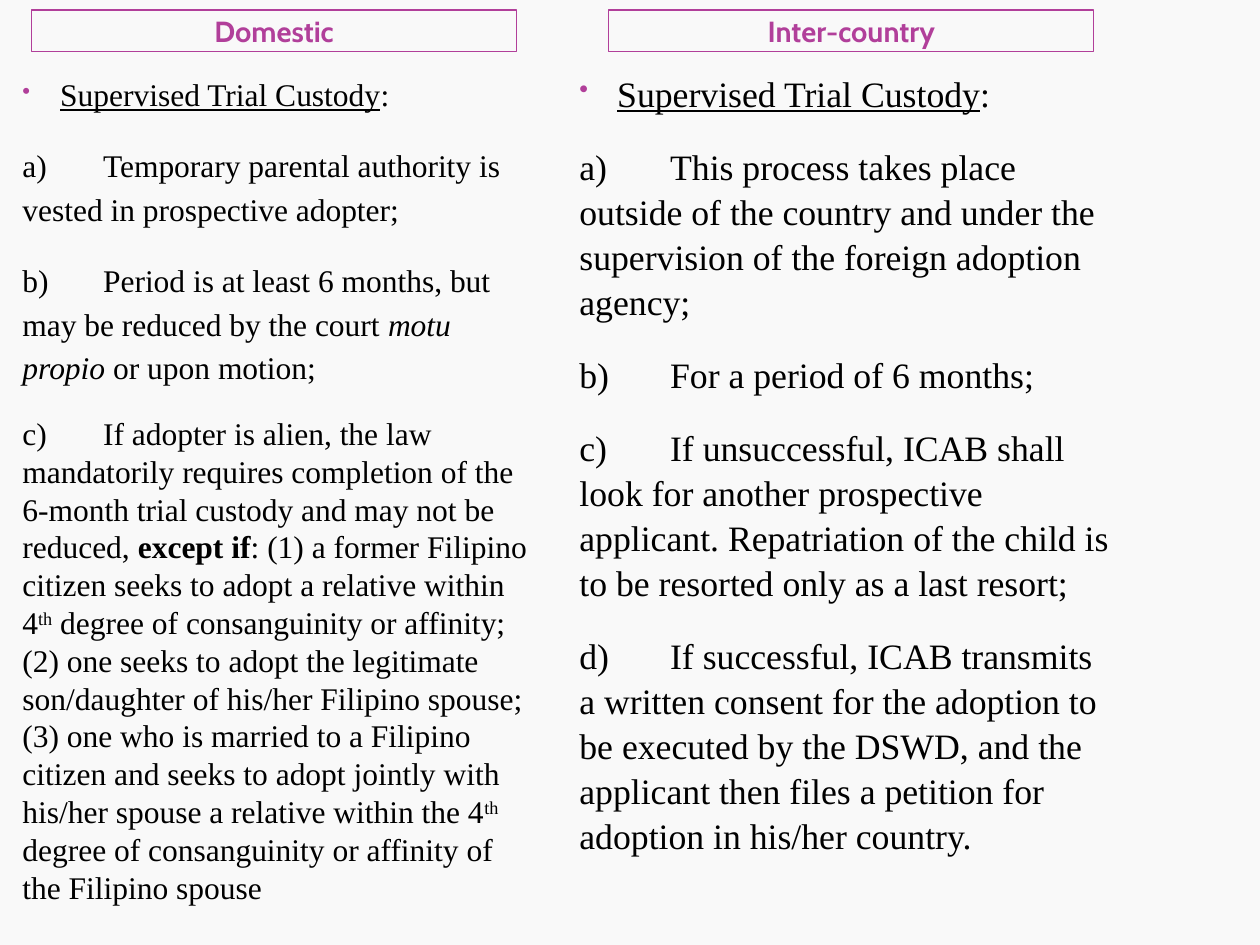
from dataclasses import dataclass

from lxml.etree import SubElement
from pptx import Presentation
from pptx.dml.color import RGBColor
from pptx.enum.shapes import MSO_SHAPE
from pptx.enum.text import MSO_ANCHOR, PP_ALIGN
from pptx.oxml.ns import qn
from pptx.util import Inches, Pt

PURPLE = RGBColor(0xB1, 0x3F, 0x9A)
BLACK = RGBColor(0x00, 0x00, 0x00)
BACKGROUND = RGBColor(0xF9, 0xF9, 0xF9)

HEADING_FONT = {"name": "Cabin", "size": Pt(16.6), "bold": True}
TOPIC = [("Supervised Trial Custody", {"underline": True}), (":", {})]
SUPERSCRIPT = {"baseline": 30000}
LOOSE = {"space_before": Pt(6), "space_after": Pt(10)}
TIGHT = {"space_before": Pt(6), "space_after": Pt(0), "line_spacing": 1.0}


@dataclass
class Item:
    runs: list[tuple[str, dict]]
    tight: bool = False


@dataclass
class Column:
    heading: str
    heading_left: float
    left: float
    width: float
    size: float
    spacing: float
    tab: float
    items: list[Item]


COLUMNS = [
    Column("Domestic", 0.25, 0.08, 4.27, 18, 1.15, 0.64, [
        Item([("Temporary parental authority is vested in prospective adopter;", {})]),
        Item([
            ("Period is at least 6 months, but may be reduced by the court ", {}),
            ("motu propio", {"italic": True}),
            (" or upon motion;", {}),
        ]),
        Item([
            ("If adopter is alien, the law mandatorily requires completion of the "
             "6-month trial custody and may not be reduced, ", {}),
            ("except if", {"bold": True}),
            (": (1) a former Filipino citizen seeks to adopt a relative within 4", {}),
            ("th", SUPERSCRIPT),
            (" degree of consanguinity or affinity; (2) one seeks to adopt the "
             "legitimate son/daughter of his/her Filipino spouse; (3) one who is "
             "married to a Filipino citizen and seeks to adopt jointly with his/her "
             "spouse a relative within the 4", {}),
            ("th", SUPERSCRIPT),
            (" degree of consanguinity or affinity of the Filipino spouse", {}),
        ], tight=True),
    ]),
    Column("Inter-country", 4.83, 4.5, 4.42, 20.4, 1.05, 0.72, [
        Item([("This process takes place outside of the country and under the "
               "supervision of the foreign adoption agency;", {})]),
        Item([("For a period of 6 months;", {})]),
        Item([("If unsuccessful, ICAB shall look for another prospective applicant. "
               "Repatriation of the child is to be resorted only as a last resort;", {})]),
        Item([("If successful, ICAB transmits a written consent for the adoption to be "
               "executed by the DSWD, and the applicant then files a petition for "
               "adoption in his/her country.", {})]),
    ]),
]


def set_all(target, values: dict) -> None:
    for name, value in values.items():
        setattr(target, name, value)


def add_run(p, text: str, color: RGBColor, font: dict) -> None:
    r = p.add_run()
    r.text = text
    values = dict(font)
    baseline = values.pop("baseline", None)
    set_all(r.font, values)
    r.font.color.rgb = color
    if baseline:
        r.font._element.set("baseline", str(baseline))


def add_bullet(p) -> None:
    pPr = p._p.get_or_add_pPr()
    pPr.set("marL", str(Inches(0.3)))
    pPr.set("indent", str(Inches(-0.3)))
    SubElement(SubElement(pPr, qn("a:buClr")), qn("a:srgbClr"), val=str(PURPLE))
    SubElement(pPr, qn("a:buSzPct"), val="73000")
    SubElement(pPr, qn("a:buChar"), char="•")


def add_tab_stop(p, position: float) -> None:
    tabs = SubElement(p._p.get_or_add_pPr(), qn("a:tabLst"))
    SubElement(tabs, qn("a:tab"), pos=str(Inches(position)), algn="l")


def add_heading(s, column: Column) -> None:
    sp = s.shapes.add_shape(MSO_SHAPE.RECTANGLE, Inches(column.heading_left),
                            Inches(0.08), Inches(3.85), Inches(0.33))
    sp.shadow.inherit = False
    sp.fill.background()
    sp.line.color.rgb = PURPLE
    sp.line.width = Pt(1)
    tf = sp.text_frame
    set_all(tf, {"word_wrap": True, "vertical_anchor": MSO_ANCHOR.MIDDLE})
    p = tf.paragraphs[0]
    p.alignment = PP_ALIGN.CENTER
    add_run(p, column.heading, PURPLE, HEADING_FONT)


def add_body(s, column: Column) -> None:
    sp = s.shapes.add_textbox(Inches(column.left), Inches(0.5),
                              Inches(column.width), Inches(6.92))
    tf = sp.text_frame
    tf.word_wrap = True
    font = {"name": "Times New Roman", "size": Pt(column.size)}
    loose = LOOSE | {"line_spacing": column.spacing}

    p = tf.paragraphs[0]
    add_bullet(p)
    set_all(p, loose | {"space_before": Pt(0)})
    for text, style in TOPIC:
        add_run(p, text, BLACK, font | style)

    for letter, item in zip("abcd", column.items):
        p = tf.add_paragraph()
        add_tab_stop(p, column.tab)
        set_all(p, TIGHT if item.tight else loose)
        add_run(p, f"{letter})\t", BLACK, font)
        for text, style in item.runs:
            add_run(p, text, BLACK, font | style)


def main() -> None:
    prs = Presentation()
    set_all(prs, {"slide_width": Inches(10), "slide_height": Inches(7.5)})
    s = prs.slides.add_slide(prs.slide_layouts[6])
    s.background.fill.solid()
    s.background.fill.fore_color.rgb = BACKGROUND
    for column in COLUMNS:
        add_heading(s, column)
        add_body(s, column)
    prs.save("out.pptx")


if __name__ == "__main__":
    main()
